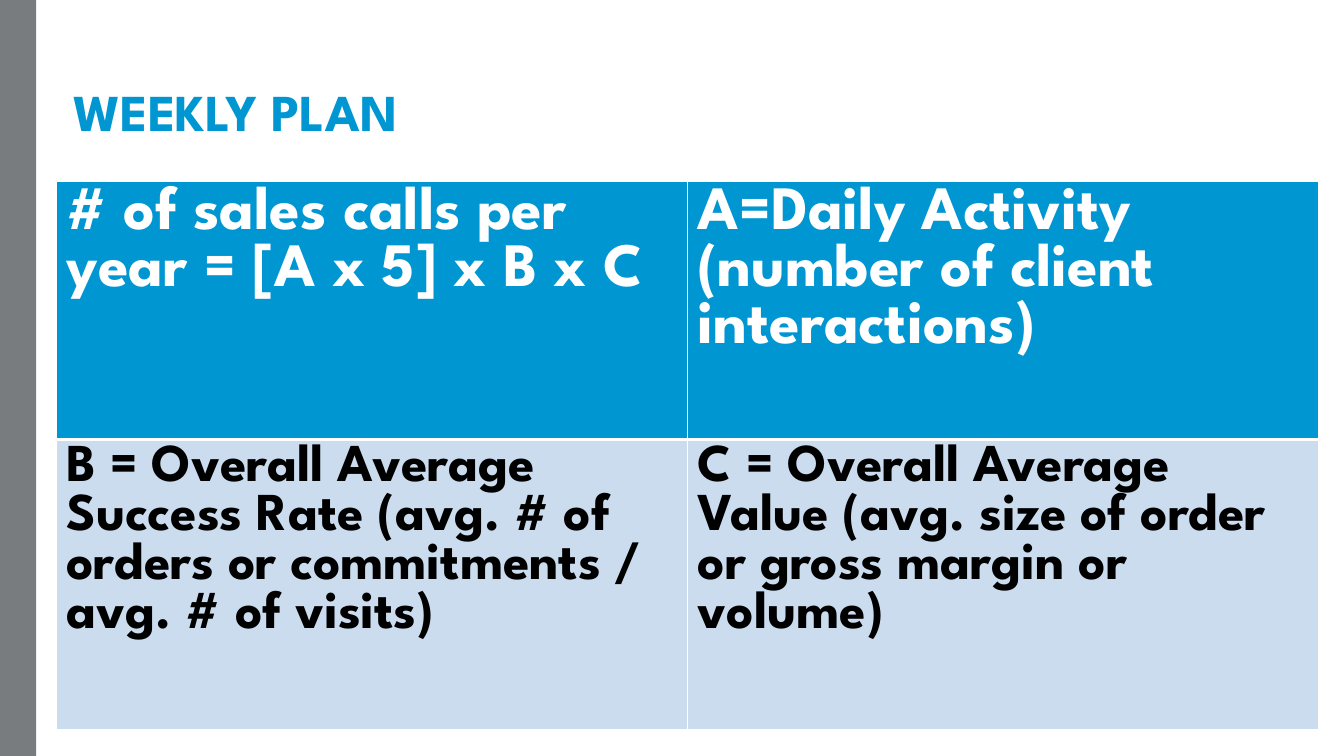
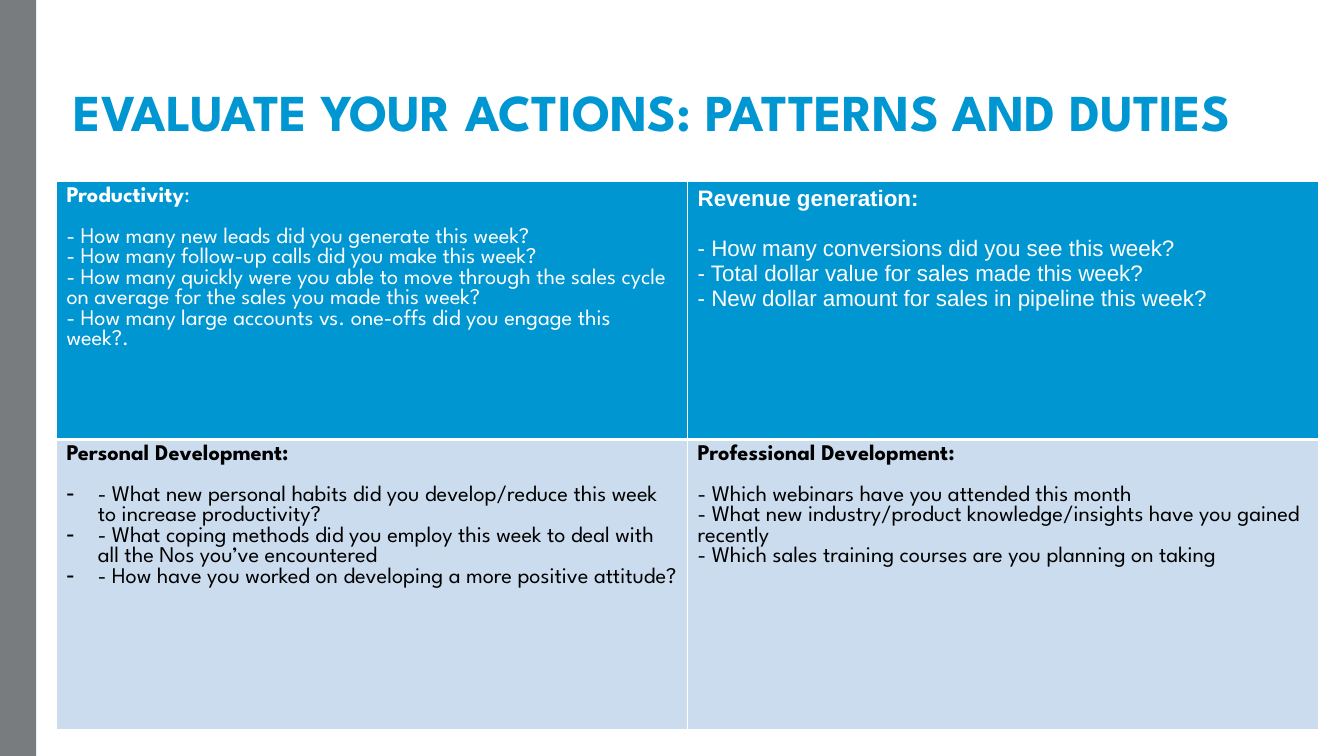
from dataclasses import dataclass

from lxml import etree
from pptx import Presentation
from pptx.dml.color import RGBColor
from pptx.enum.shapes import MSO_SHAPE
from pptx.enum.text import MSO_ANCHOR
from pptx.oxml.ns import qn
from pptx.util import Emu, Pt

RECTANGLE = MSO_SHAPE.RECTANGLE
MIDDLE = MSO_ANCHOR.MIDDLE
EMU_PER_PX = 9144
BLANK_LAYOUT = 6
SLIDE_WIDTH, SLIDE_HEIGHT = 1333, 750


def px(length):
    return Emu(length * EMU_PER_PX)


@dataclass(frozen=True)
class Theme:
    blue: str = "0096D2"
    pale: str = "CADCEE"
    band: str = "797C7F"
    white: str = "FFFFFF"
    black: str = "000000"
    font: str = "League Spartan"
    plain_font: str = "Arial"
    title_size: int = 37
    formula_size: int = 44
    term_size: int = 38
    body_size: int = 16
    thin_border: int = 1
    thick_border: int = 3


THEME = Theme()


@dataclass(frozen=True)
class Quadrant:
    heading: str
    items: tuple = ()
    size: int = THEME.body_size
    font: str = THEME.font
    gap: float = 14.7
    light_ending: str = ""
    bulleted: bool = False


class Deck:
    def __init__(self, theme):
        self.theme = theme
        self.presentation = Presentation()
        self.presentation.slide_width = px(SLIDE_WIDTH)
        self.presentation.slide_height = px(SLIDE_HEIGHT)
        self.slide = None

    def add_slide(self, title):
        layout = self.presentation.slide_layouts[BLANK_LAYOUT]
        self.slide = self.presentation.slides.add_slide(layout)
        self.add_band()
        self.add_title(title)

    def add_band(self):
        shape = self.slide.shapes.add_shape(RECTANGLE, 0, 0, px(36), px(SLIDE_HEIGHT))
        shape.shadow.inherit = False
        shape.fill.solid()
        shape.fill.fore_color.rgb = RGBColor.from_string(self.theme.band)
        shape.line.fill.background()

    def add_title(self, title):
        shape = self.slide.shapes.add_textbox(px(63), px(69), px(1226), px(82))
        frame = shape.text_frame
        frame.word_wrap = True
        frame.vertical_anchor = MIDDLE
        paragraph = frame.paragraphs[0]
        paragraph.text = title
        self.style(paragraph, self.theme.font, self.theme.title_size, self.theme.blue, True)

    def add_quadrants(self, rows):
        column_width, row_heights = 626, (256, 288)
        frame = self.slide.shapes.add_table(
            2, 2, px(56), px(180), px(2 * column_width), px(sum(row_heights)))
        table = frame.table
        table.first_row = False
        table.horz_banding = False
        row_styles = ((self.theme.blue, self.theme.white), (self.theme.pale, self.theme.black))
        for column in table.columns:
            column.width = px(column_width)
        for row_index, (quadrants, (fill, color)) in enumerate(zip(rows, row_styles)):
            table.rows[row_index].height = px(row_heights[row_index])
            for column_index, quadrant in enumerate(quadrants):
                cell = table.cell(row_index, column_index)
                self.set_borders(cell, row_index)
                cell.fill.solid()
                cell.fill.fore_color.rgb = RGBColor.from_string(fill)
                self.fill_cell(cell, quadrant, color)

    def fill_cell(self, cell, quadrant, color):
        frame = cell.text_frame
        heading = frame.paragraphs[0]
        heading.text = quadrant.heading
        if quadrant.items:
            heading.space_after = Pt(quadrant.gap)
        self.style(heading, quadrant.font, quadrant.size, color, True)
        if quadrant.light_ending:
            ending = heading.add_run()
            ending.text = quadrant.light_ending
            ending.font.bold = False
        for item in quadrant.items:
            paragraph = frame.add_paragraph()
            paragraph.text = item
            if quadrant.bulleted:
                self.add_bullet(paragraph)
            self.style(paragraph, quadrant.font, quadrant.size, color, False)

    def add_bullet(self, paragraph):
        properties = paragraph._p.get_or_add_pPr()
        properties.set("marL", str(px(31)))
        properties.set("indent", str(-px(31)))
        etree.SubElement(properties, qn("a:buChar"), char="-")

    def set_borders(self, cell, row_index):
        properties = cell._tc.get_or_add_tcPr()
        thin, thick = self.theme.thin_border, self.theme.thick_border
        top, bottom = (thin, thick) if row_index == 0 else (thick, thin)
        for side, width in (("L", thin), ("R", thin), ("T", top), ("B", bottom)):
            line = etree.SubElement(properties, qn(f"a:ln{side}"), w=str(Pt(width)))
            fill = etree.SubElement(line, qn("a:solidFill"))
            etree.SubElement(fill, qn("a:srgbClr"), val=self.theme.white)

    def style(self, paragraph, font_name, size, color, bold):
        font = paragraph.font
        font.name = font_name
        font.size = Pt(size)
        font.bold = bold
        font.color.rgb = RGBColor.from_string(color)


def main():
    deck = Deck(THEME)

    deck.add_slide("WEEKLY PLAN")
    deck.add_quadrants((
        (
            Quadrant("# of sales calls per year = [A x 5] x B x C", size=THEME.formula_size),
            Quadrant("A=Daily Activity (number of client interactions)",
                     size=THEME.formula_size),
        ),
        (
            Quadrant("B = Overall Average Success Rate (avg. # of orders or commitments"
                     " / avg. # of visits)", size=THEME.term_size),
            Quadrant("C = Overall Average Value (avg. size of order or gross margin"
                     " or volume)", size=THEME.term_size),
        ),
    ))

    deck.add_slide("EVALUATE YOUR ACTIONS: PATTERNS AND DUTIES")
    deck.add_quadrants((
        (
            Quadrant("Productivity", (
                "- How many new leads did you generate this week?",
                "- How many follow-up calls did you make this week?",
                "- How many quickly were you able to move through the sales cycle"
                " on average for the sales you made this week?",
                "- How many large accounts vs. one-offs did you engage this week?.",
            ), light_ending=":"),
            Quadrant("Revenue generation:", (
                "- How many conversions did you see this week?",
                "- Total dollar value for sales made this week?",
                "- New dollar amount for sales in pipeline this week?",
            ), font=THEME.plain_font, gap=18),
        ),
        (
            Quadrant("Personal Development:", (
                "- What new personal habits did you develop/reduce this week"
                " to increase productivity?",
                "- What coping methods did you employ this week to deal with"
                " all the Nos you’ve encountered",
                "- How have you worked on developing a more positive attitude?",
            ), bulleted=True),
            Quadrant("Professional Development:", (
                "- Which webinars have you attended this month",
                "- What new industry/product knowledge/insights have you gained recently",
                "- Which sales training courses are you planning on taking",
            )),
        ),
    ))

    deck.presentation.save("out.pptx")


if __name__ == "__main__":
    main()
